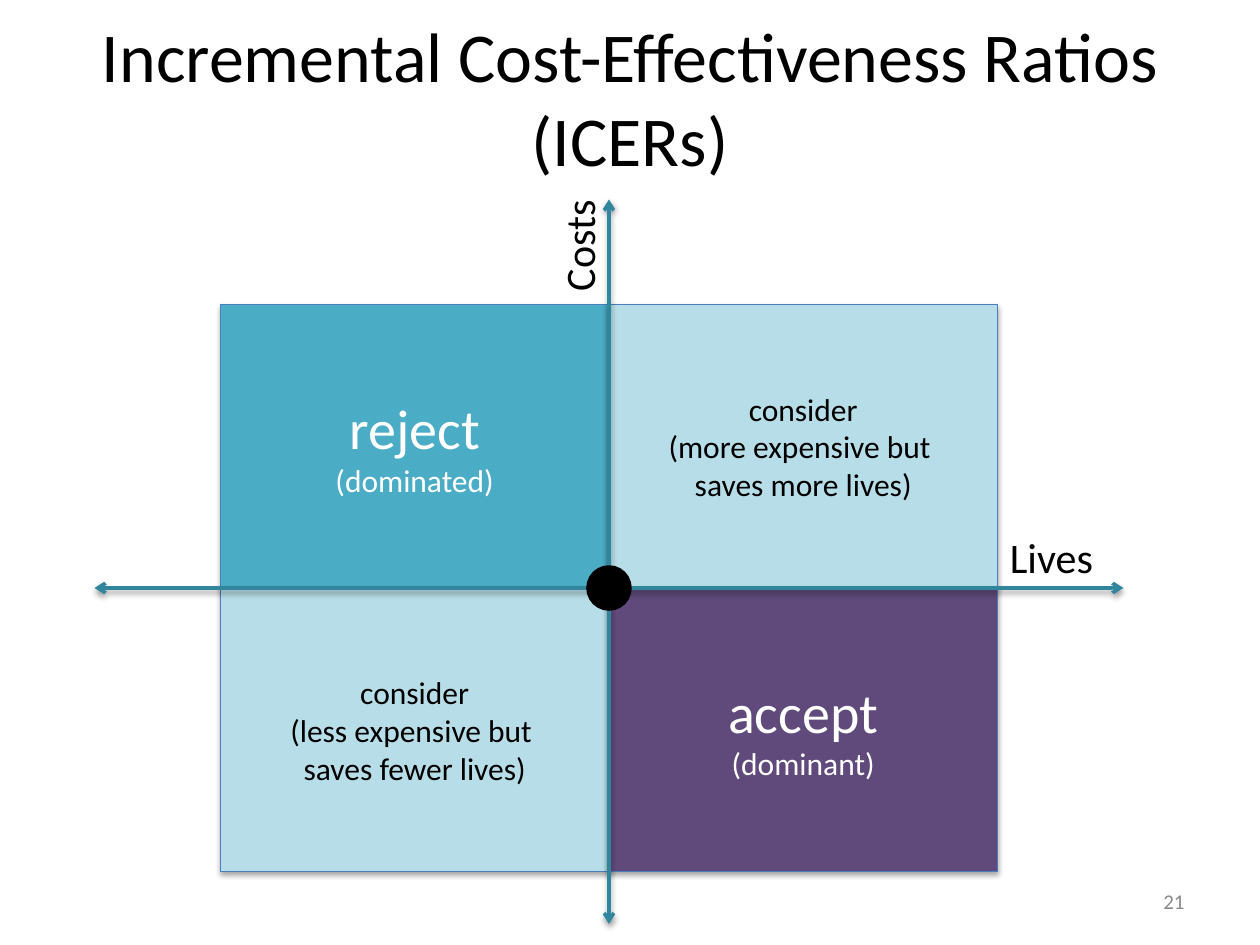
import pptx
import pptx.util
import pptx.dml.color
import pptx.enum.shapes
import pptx.enum.text
import pptx.oxml
import pptx.oxml.ns

PX = 7620  # EMU in one px, 120 px to the inch
FONT = "Calibri"
COLORS = {
    "black": "000000", "white": "FFFFFF", "gray": "898989", "teal": "4BACC6",
    "pale": "B7DEE8", "purple": "604A7B", "border": "4B7EBC", "axis": "31859C",
}
SHAPE = pptx.enum.shapes.MSO_SHAPE
ALIGN = pptx.enum.text.PP_ALIGN
MIDDLE = pptx.enum.text.MSO_ANCHOR.MIDDLE
AUTO_SIZE = pptx.enum.text.MSO_AUTO_SIZE


def px(*lengths):
    return [pptx.util.Emu(n * PX) for n in lengths]


def rgb(name):
    return pptx.dml.color.RGBColor.from_string(COLORS[name])


def write(tf, lines, color, align):
    """Fill a text frame with one paragraph for each (text, size)."""
    for i, (text, size) in enumerate(lines):
        p = tf.add_paragraph() if i else tf.paragraphs[0]
        p.text = text
        p.alignment = align
        p.font.name = FONT
        p.font.size = pptx.util.Pt(size)
        p.font.color.rgb = rgb(color)


def add_shadow(sp, distance, opacity):
    """Drop a soft black shadow straight down; distance in EMU, opacity in percent."""
    sp._element.spPr.append(pptx.oxml.parse_xml(
        f'<a:effectLst {pptx.oxml.ns.nsdecls("a")}>'
        f'<a:outerShdw blurRad="40000" dist="{distance}" dir="5400000" rotWithShape="0">'
        f'<a:srgbClr val="{COLORS["black"]}"><a:alpha val="{opacity * 1000}"/></a:srgbClr>'
        '</a:outerShdw></a:effectLst>'))


def add_label(shapes, box, text, size, color="black", align=ALIGN.LEFT):
    sp = shapes.add_textbox(*px(*box))
    sp.text_frame.word_wrap = True
    write(sp.text_frame, [(text, size)], color, align)
    return sp


def add_quadrant(shapes, box, fill, color, lines):
    sp = shapes.add_shape(SHAPE.RECTANGLE, *px(*box))
    sp.fill.solid()
    sp.fill.fore_color.rgb = rgb(fill)
    sp.line.color.rgb = rgb("border")
    sp.line.width = pptx.util.Pt(0.75)
    add_shadow(sp, 23000, 35)
    sp.text_frame.vertical_anchor = MIDDLE
    write(sp.text_frame, lines, color, ALIGN.CENTER)


def add_axis(shapes, *ends):
    line = shapes.add_connector(pptx.enum.shapes.MSO_CONNECTOR.STRAIGHT, *px(*ends))
    line.line.color.rgb = rgb("axis")
    line.line.width = pptx.util.Pt(2)
    ln = line.line._get_or_add_ln()
    for end in ("headEnd", "tailEnd"):
        ln.append(pptx.oxml.parse_xml(
            f'<a:{end} {pptx.oxml.ns.nsdecls("a")} type="arrow"/>'))
    add_shadow(line, 20000, 38)


def add_title(s, box, text):
    title = s.shapes.title
    title.left, title.top, title.width, title.height = px(*box)
    tf = title.text_frame
    tf.word_wrap = True
    tf.auto_size = AUTO_SIZE.NONE
    tf.vertical_anchor = MIDDLE
    write(tf, [(text, 40)], "black", ALIGN.CENTER)


def add_plane(s, box):
    """Cost and lives plane: four quadrants, two axes and the origin."""
    left, top, width, height = box
    x, y = left + 490, top + 370
    w, h = 370, 270
    quadrants = [
        (-1, -1, "teal", "white", [("reject", 32), ("(dominated)", 18)]),
        (0, -1, "pale", "black",
         [("consider", 18), ("(more expensive but ", 18), ("saves more lives)", 18)]),
        (-1, 0, "pale", "black",
         [("consider", 18), ("(less expensive but ", 18), ("saves fewer lives)", 18)]),
        (0, 0, "purple", "white", [("accept", 32), ("(dominant)", 18)]),
    ]
    shapes = s.shapes.add_group_shape().shapes
    for col, row, fill, color, lines in quadrants:
        add_quadrant(shapes, (x + col * w, y + row * h, w, h), fill, color, lines)
    add_axis(shapes, x, top, x, top + height)
    add_axis(shapes, left, y, left + width, y)
    costs = add_label(shapes, (x - 89, top + 9, 120, 60), "Costs", 24)
    costs.rotation = 270
    add_label(shapes, (x + w, y - 60, 120, 60), "Lives", 24)

    origin = s.shapes.add_shape(SHAPE.OVAL, *px(x - 20, y - 20, 40, 40))
    origin.shadow.inherit = False
    origin.fill.solid()
    origin.fill.fore_color.rgb = rgb("black")
    origin.line.color.rgb = rgb("black")
    origin.line.width = pptx.util.Pt(2)


def main():
    prs = pptx.Presentation()
    prs.slide_width, prs.slide_height = px(1200, 900)
    s = prs.slides.add_slide(prs.slide_layouts[5])
    add_title(s, (60, 60, 1080, 64), "Incremental Cost-Effectiveness Ratios (ICERs)")
    number = add_label(s.shapes, (860, 834, 280, 48), "21", 12, "gray", ALIGN.RIGHT)
    number.text_frame.vertical_anchor = MIDDLE
    add_plane(s, (90, 190, 980, 690))
    prs.save("out.pptx")


if __name__ == "__main__":
    main()
